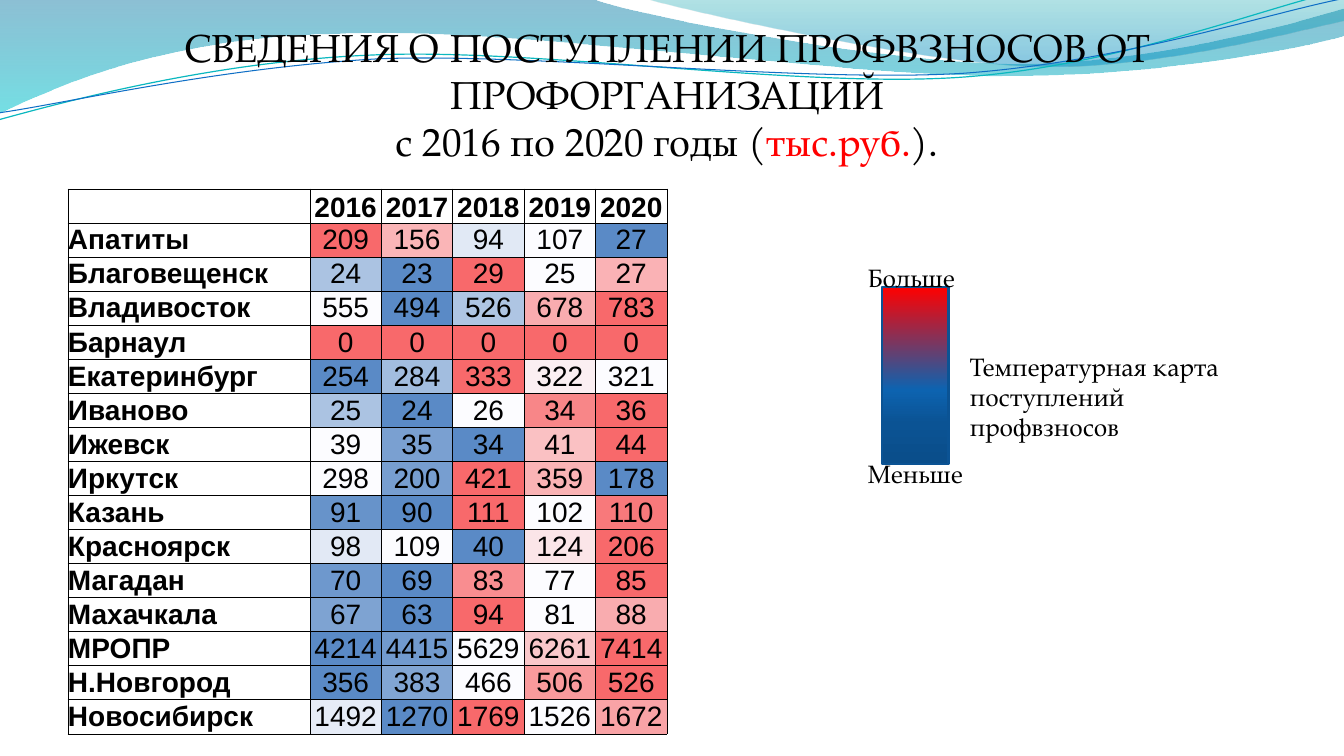
import pptx
import pptx.dml.color
import pptx.enum.shapes
import pptx.enum.text
import pptx.oxml
import pptx.oxml.ns
import pptx.util

RGBColor = pptx.dml.color.RGBColor
ALIGN = pptx.enum.text.PP_ALIGN
ANCHOR = pptx.enum.text.MSO_ANCHOR
GROW = pptx.enum.text.MSO_AUTO_SIZE.SHAPE_TO_FIT_TEXT
qn = pptx.oxml.ns.qn
BLACK = RGBColor(0x00, 0x00, 0x00)
RED = RGBColor(0xFF, 0x00, 0x00)
TEAL_LINE = RGBColor(0x0A, 0xB8, 0xBF)
BLUE_LINE = RGBColor(0x0F, 0x6F, 0xC6)
LEGEND_LINE = RGBColor(0x0B, 0x53, 0x94)
LOW = RGBColor(0x5A, 0x8A, 0xC6)
MIDDLE = RGBColor(0xFC, 0xFC, 0xFF)
HIGH = RGBColor(0xF8, 0x69, 0x6B)
WAVE_LEFT = [(0, RGBColor(0x00, 0x74, 0xA1), 45), (100, RGBColor(0x00, 0xC6, 0xCF), 55)]
WAVE_RIGHT = [(0, RGBColor(0x00, 0xA1, 0xA9), 30), (80, RGBColor(0x00, 0x8B, 0xBF), 45)]
LEGEND_SCALE = [(0, RED, 100), (58, RGBColor(0x0D, 0x63, 0xB0), 100),
                (77, LEGEND_LINE, 100), (97, RGBColor(0x0A, 0x4E, 0x8B), 100)]

SERIF, SANS = "TeX Gyre Pagella", "Arial"
STRAND_TILT = -2.7
YEARS = ["2016", "2017", "2018", "2019", "2020"]
FEES = [
    ("Апатиты", [209, 156, 94, 107, 27]),
    ("Благовещенск", [24, 23, 29, 25, 27]),
    ("Владивосток", [555, 494, 526, 678, 783]),
    ("Барнаул", [0, 0, 0, 0, 0]),
    ("Екатеринбург", [254, 284, 333, 322, 321]),
    ("Иваново", [25, 24, 26, 34, 36]),
    ("Ижевск", [39, 35, 34, 41, 44]),
    ("Иркутск", [298, 200, 421, 359, 178]),
    ("Казань", [91, 90, 111, 102, 110]),
    ("Красноярск", [98, 109, 40, 124, 206]),
    ("Магадан", [70, 69, 83, 77, 85]),
    ("Махачкала", [67, 63, 94, 81, 88]),
    ("МРОПР", [4214, 4415, 5629, 6261, 7414]),
    ("Н.Новгород", [356, 383, 466, 506, 526]),
    ("Новосибирск", [1492, 1270, 1769, 1526, 1672]),
]


def px(n):
    """Turn pixels into EMU."""
    return pptx.util.Emu(round(n * 914400 / 100.8))


def format_run(r, font, size, color=BLACK, bold=False):
    """Set the look of one run."""
    r.font.name, r.font.size, r.font.bold = font, pptx.util.Pt(size), bold
    r.font.color.rgb = color


def fill_gradient(sp, stops):
    """Fill a shape with a top-to-bottom gradient of (position, colour, opacity)."""
    sp.fill.background()
    props = sp.element.spPr
    gs = "".join(f'<a:gs pos="{pos * 1000}"><a:srgbClr val="{color}">'
                 f'<a:alpha val="{alpha * 1000}"/></a:srgbClr></a:gs>' for pos, color, alpha in stops)
    grad = pptx.oxml.parse_xml(f'<a:gradFill {pptx.oxml.ns.nsdecls("a")}><a:gsLst>{gs}</a:gsLst>'
                               '<a:lin ang="5400000" scaled="0"/></a:gradFill>')
    props.replace(props.find(qn("a:noFill")), grad)


def add_outline(shapes, x, y, start, segments, closed):
    """Draw straight (x, y) and cubic (x1, y1, x2, y2, x, y) segments relative to (x, y)."""
    points = [(px(x + seg[i]), px(y + seg[i + 1])) for seg in segments for i in range(0, len(seg), 2)]
    builder = shapes.build_freeform(px(x + start[0]), px(y + start[1]), scale=1.0)
    builder.add_line_segments(points, close=closed)
    sp = builder.convert_to_shape()
    sp.shadow.inherit = False
    lines = iter(list(sp.element.iter(qn("a:lnTo"))))
    for seg in segments:
        steps = [next(lines) for _ in range(len(seg) // 2)]
        if len(steps) == 3:
            curve = pptx.oxml.parse_xml(f'<a:cubicBezTo {pptx.oxml.ns.nsdecls("a")}/>')
            steps[0].addprevious(curve)
            for step in steps:
                curve.append(step[0])
                step.getparent().remove(step)
    return sp


def add_waves(s, x, y):
    """Draw the decorative waves along the top edge and keep them on the layout."""
    bands = [
        (WAVE_LEFT, (0, 0), [(592, -1), (639, 17, 892, 64, 1019, 64), (1147, 64, 1288, 26, 1344, 9),
                             (1346, 36), (1321, 44, 1169, 77, 1002, 76), (836, 76, 513, 28, 346, 34),
                             (173, 36, 61, 84, -1, 114), (0, 0)]),
        (WAVE_RIGHT, (644, -1), [(684, 11, 916, 62, 1033, 66), (1150, 70, 1292, 32, 1344, 21),
                                 (1344, 0), (644, -1)]),
    ]
    strands = [
        (TEAL_LINE, 0.85, (-3, 88), [(64, 73, 213, 40, 372, 41), (532, 41, 794, 94, 957, 91),
                                     (1115, 88, 1264, 36, 1344, 22)]),
        (BLUE_LINE, 0.75, (-2, 81), [(63, 75, 220, 46, 381, 45), (541, 47, 801, 89, 962, 87),
                                     (1123, 83, 1266, 42, 1347, 30)]),
    ]
    layout = s.slide_layout.shapes.element
    for stops, start, segments in bands:
        sp = add_outline(s.shapes, x, y, start, segments, True)
        fill_gradient(sp, stops)
        sp.line.fill.background()
        layout.append(sp.element)
    group = s.shapes.add_group_shape()
    for color, width, start, segments in strands:
        sp = add_outline(group.shapes, x, y, start, segments, False)
        sp.fill.background()
        sp.line.color.rgb, sp.line.width = color, pptx.util.Pt(width)
        sp.rotation = STRAND_TILT
    layout.append(group.element)
    for i, node in enumerate(layout.iter(qn("p:cNvPr")), 1):
        node.set("id", str(i))


def set_title(s, x, y, w, h):
    """Write the heading into the title placeholder."""
    title = s.shapes.title
    title.left, title.top, title.width, title.height = map(px, (x, y, w, h))
    tf = title.text_frame
    tf.auto_size, tf.vertical_anchor, tf.word_wrap = GROW, ANCHOR.TOP, True
    tf.text = "СВЕДЕНИЯ О ПОСТУПЛЕНИИ ПРОФВЗНОСОВ ОТ ПРОФОРГАНИЗАЦИЙ"
    p = tf.add_paragraph()
    for text in ("с 2016 по 2020 годы (", "тыс.руб.", ")."):
        p.add_run().text = text
    for p in tf.paragraphs:
        p.alignment = ALIGN.CENTER
        for r in p.runs:
            format_run(r, SERIF, 28, RED if r.text == "тыс.руб." else BLACK)


def heat_color(value, values):
    """Pick a colour on the low-median-high scale of one row."""
    low, middle, high = min(values), sorted(values)[len(values) // 2], max(values)
    if value == high:
        return HIGH
    if value <= middle:
        a, b, t = LOW, MIDDLE, (value - low) / (middle - low)
    else:
        a, b, t = MIDDLE, HIGH, (value - middle) / (high - middle)
    return RGBColor(*(int(m + (n - m) * t) for m, n in zip(a, b)))


def set_cell(cell, text, bold, align, anchor, color=None):
    """Write, border and fill one table cell."""
    cell.margin_left = cell.margin_right = cell.margin_top = cell.margin_bottom = 0
    cell.vertical_anchor = anchor
    p = cell.text_frame.paragraphs[0]
    p.text, p.alignment = text, align
    for r in p.runs:
        format_run(r, SANS, 20, bold=bold)
    for side in ("lnL", "lnR", "lnT", "lnB"):
        cell._tc.get_or_add_tcPr().append(pptx.oxml.parse_xml(
            f'<a:{side} {pptx.oxml.ns.nsdecls("a")} w="6350"><a:solidFill>'
            f'<a:srgbClr val="{BLACK}"/></a:solidFill></a:{side}>'))
    if color is None:
        cell.fill.background()
    else:
        cell.fill.solid()
        cell.fill.fore_color.rgb = color


def add_fee_table(s, x, y, w, h, name_w=242):
    """Build the heat-mapped table of fees by city and year."""
    rows, cols = len(FEES) + 1, len(YEARS) + 1
    table = s.shapes.add_table(rows, cols, px(x), px(y), px(w), px(h)).table
    table.first_row = table.horz_banding = False
    for row in table.rows:
        row.height = px(h / rows)
    for i, column in enumerate(table.columns):
        column.width = px((w - name_w) / len(YEARS) if i else name_w)
    for i, text in enumerate([""] + YEARS):
        set_cell(table.cell(0, i), text, True, ALIGN.CENTER, ANCHOR.BOTTOM)
    for i, (city, values) in enumerate(FEES, 1):
        set_cell(table.cell(i, 0), city, True, ALIGN.LEFT, ANCHOR.MIDDLE)
        for j, value in enumerate(values, 1):
            set_cell(table.cell(i, j), str(value), False, ALIGN.CENTER, ANCHOR.MIDDLE,
                     heat_color(value, values))


def add_legend(s, x, y):
    """Group the colour bar with its labels."""
    shapes = s.shapes.add_group_shape().shapes
    bar = shapes.add_shape(pptx.enum.shapes.MSO_SHAPE.RECTANGLE, px(x + 24), px(y + 30), px(67), px(177))
    bar.shadow.inherit = False
    fill_gradient(bar, LEGEND_SCALE)
    bar.line.color.rgb, bar.line.width = LEGEND_LINE, pptx.util.Pt(2)
    labels = [("Температурная карта поступлений профвзносов", 102, 89, 272, 102),
              ("Больше", 0, 0, 114, 40), ("Меньше", 0, 196, 127, 40)]
    for text, dx, dy, w, h in labels:
        tf = shapes.add_textbox(px(x + dx), px(y + dy), px(w), px(h)).text_frame
        tf.word_wrap, tf.auto_size, tf.text = True, GROW, text
        format_run(tf.paragraphs[0].runs[0], SERIF, 18)


def main():
    """Build the slide and save it."""
    prs = pptx.Presentation()
    prs.slide_width, prs.slide_height = px(1344), px(756)
    s = prs.slides.add_slide(prs.slide_layouts[5])
    add_waves(s, 0, 0)
    set_title(s, 8, 18, 1318, 152)
    add_fee_table(s, 68, 189, 599, 545)
    add_legend(s, 858, 257)
    prs.save("out.pptx")


if __name__ == "__main__":
    main()
